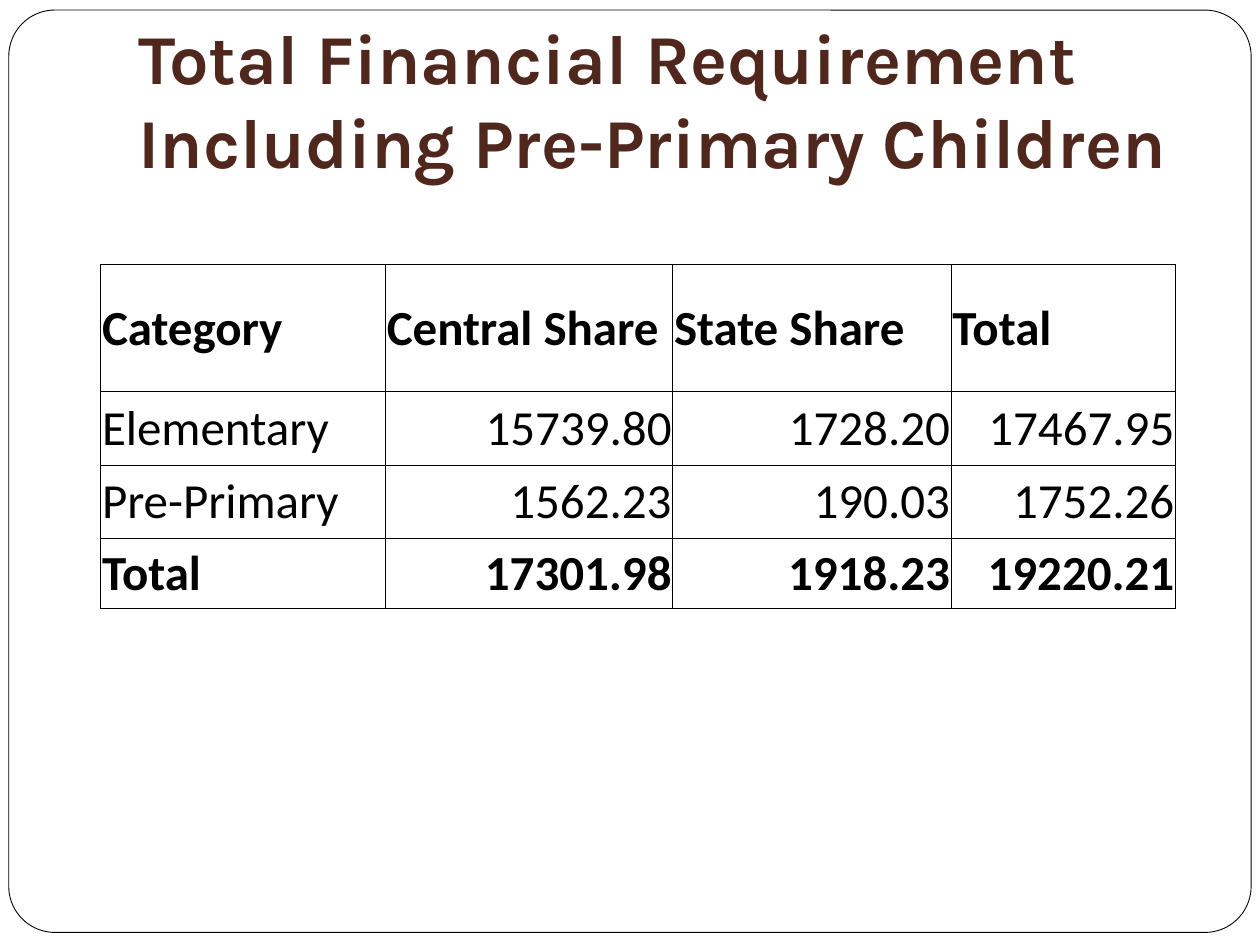
import pptx
import pptx.dml.color
import pptx.enum.shapes
import pptx.enum.text
import pptx.oxml
import pptx.oxml.ns
import pptx.util

Inches = pptx.util.Inches
Pt = pptx.util.Pt
ANCHOR = pptx.enum.text.MSO_ANCHOR
ALIGN = pptx.enum.text.PP_ALIGN

COLORS = {"paper": "FFFFFF", "ink": "000000", "title": "4F271C"}
LINE_WIDTH = Pt(0.5)

COLUMN_WIDTHS = [2.26, 2.28, 2.21, 1.78]
ROW_HEIGHTS = [1.01, 0.58, 0.58, 0.56]
ROWS = [
    ["Category", "Central Share", "State Share", "Total"],
    ["Elementary", "15739.80", "1728.20", "17467.95"],
    ["Pre-Primary", "1562.23", "190.03", "1752.26"],
    ["Total", "17301.98", "1918.23", "19220.21"],
]
BOLD_ROWS = (0, len(ROWS) - 1)


def rgb(name):
    return pptx.dml.color.RGBColor.from_string(COLORS[name])


def add_borders(cell):
    """Draw a thin line on all four sides; call before setting the cell's fill."""
    properties = cell._tc.get_or_add_tcPr()
    for side in ("lnL", "lnR", "lnT", "lnB"):
        properties.append(pptx.oxml.parse_xml(
            f'<a:{side} {pptx.oxml.ns.nsdecls("a")} w="{LINE_WIDTH}"><a:solidFill>'
            f'<a:srgbClr val="{COLORS["ink"]}"/></a:solidFill></a:{side}>'))


presentation = pptx.Presentation()
presentation.slide_width = Inches(10)
presentation.slide_height = Inches(7.5)
slide = presentation.slides.add_slide(presentation.slide_layouts[6])

# Rounded frame
frame = slide.shapes.add_shape(
    pptx.enum.shapes.MSO_SHAPE.ROUNDED_RECTANGLE,
    Inches(0.07), Inches(0.08), Inches(9.86), Inches(7.32))
frame.adjustments[0] = 0.05
frame.shadow.inherit = False
frame.fill.solid()
frame.fill.fore_color.rgb = rgb("paper")
frame.line.color.rgb = rgb("ink")
frame.line.width = LINE_WIDTH

# Title
title = slide.shapes.add_textbox(Inches(1), Inches(0.3), Inches(8.5), Inches(1.25))
title_text = title.text_frame
title_text.word_wrap = True
title_text.vertical_anchor = ANCHOR.BOTTOM
title_text.margin_bottom = Inches(0.1)
paragraph = title_text.paragraphs[0]
paragraph.text = "Total Financial Requirement Including Pre-Primary Children"
paragraph.font.name = "Karla"
paragraph.font.size = Pt(40)
paragraph.font.bold = True
paragraph.font.color.rgb = rgb("title")

# Table of shares
table = slide.shapes.add_table(
    len(ROWS), len(COLUMN_WIDTHS), Inches(0.8), Inches(2.1),
    Inches(sum(COLUMN_WIDTHS)), Inches(sum(ROW_HEIGHTS))).table
table.horz_banding = False
for column, width in zip(table.columns, COLUMN_WIDTHS):
    column.width = Inches(width)
for row, height in zip(table.rows, ROW_HEIGHTS):
    row.height = Inches(height)

for row_index, values in enumerate(ROWS):
    for column_index, value in enumerate(values):
        cell = table.cell(row_index, column_index)
        add_borders(cell)
        cell.fill.background()
        cell.vertical_anchor = ANCHOR.MIDDLE
        cell.margin_left = cell.margin_right = cell.margin_top = Inches(0.01)
        cell.margin_bottom = 0
        paragraph = cell.text_frame.paragraphs[0]
        paragraph.text = value
        is_number = row_index > 0 and column_index > 0
        paragraph.alignment = ALIGN.RIGHT if is_number else ALIGN.LEFT
        paragraph.font.name = "Calibri"
        paragraph.font.size = Pt(28)
        paragraph.font.bold = row_index in BOLD_ROWS
        paragraph.font.color.rgb = rgb("ink")

presentation.save("out.pptx")
